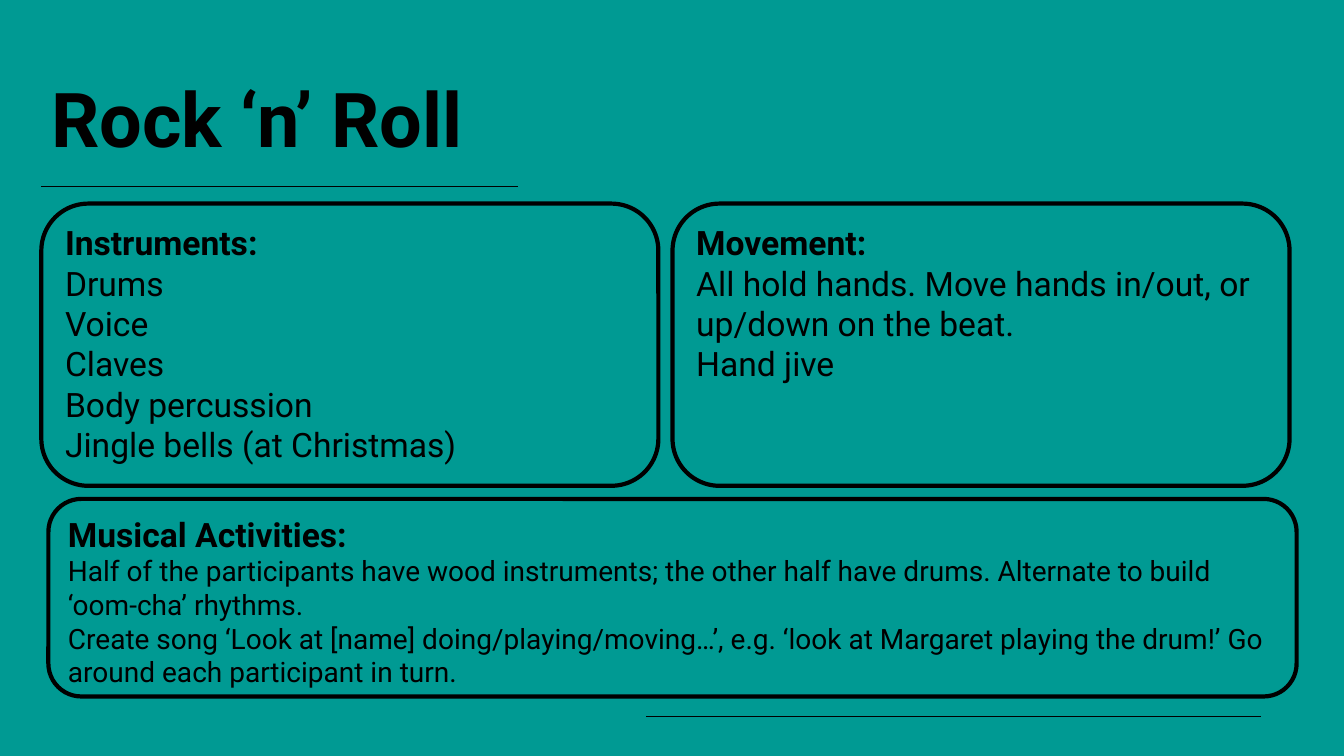
from lxml import etree
from pptx import Presentation
from pptx import util as u
from pptx.dml.color import RGBColor
from pptx.enum import shapes, text
from pptx.oxml.ns import qn

FONT = "Roboto"
TEAL, BLACK = "009A93", "000000"
LEFT, TOP = 0.41, 2.02
CARD_W, CARD_H, PITCH = 6.12, 2.8, 6.26

CARDS = [
    ("Instruments:", ["Drums", "Voice", "Claves", "Body percussion",
                      "Jingle bells (at Christmas)"]),
    ("Movement:", ["All hold hands. Move hands in/out, or up/down on the beat.",
                   "Hand jive"]),
]
ACTIVITIES = [
    "Half of the participants have wood instruments; the other half have drums. "
    "Alternate to build ‘oom-cha’ rhythms.",
    "Create song ‘Look at [name] doing/playing/moving…’, e.g. ‘look at Margaret "
    "playing the drum!’ Go around each participant in turn.",
]


def color(value):
    return RGBColor.from_string(value)


def add_run(p, words, size, bold=False):
    r = p.add_run()
    r.text = words
    r.font.name, r.font.size, r.font.bold = FONT, u.Pt(size), bold
    r.font.color.rgb = color(BLACK)


def add_rule(s, x1, x2, y):
    """Draw a thin horizontal line."""
    line = s.shapes.add_connector(shapes.MSO_CONNECTOR.STRAIGHT,
                                  *map(u.Inches, (x1, y, x2, y)))
    line.line.color.rgb = color(BLACK)
    line.line.width = u.Pt(1)
    etree.SubElement(line._element.spPr, qn("a:effectLst"))


def add_title(s, words, box):
    tf = s.shapes.add_textbox(*map(u.Inches, box)).text_frame
    tf.word_wrap = True
    tf.vertical_anchor = text.MSO_ANCHOR.TOP
    p = tf.paragraphs[0]
    p.line_spacing = 0.9
    add_run(p, words, 54, bold=True)


def add_card(s, box, heading, lines, size=24):
    """Draw a rounded outline with a bold heading over plain lines."""
    sp = s.shapes.add_shape(shapes.MSO_SHAPE.ROUNDED_RECTANGLE,
                            *map(u.Inches, box))
    sp.shadow.inherit = False
    sp.fill.background()
    sp.line.color.rgb = color(BLACK)
    sp.line.width = u.Pt(3)
    tf = sp.text_frame
    tf.word_wrap = True
    tf.vertical_anchor = text.MSO_ANCHOR.TOP
    add_run(tf.paragraphs[0], heading, 24, bold=True)
    for line in lines:
        add_run(tf.add_paragraph(), line, size)
    for p in tf.paragraphs:
        p.alignment = text.PP_ALIGN.LEFT


def main():
    prs = Presentation()
    prs.slide_width, prs.slide_height = u.Inches(13.33), u.Inches(7.5)
    s = prs.slides.add_slide(prs.slide_layouts[6])
    s.background.fill.solid()
    s.background.fill.fore_color.rgb = color(TEAL)

    add_rule(s, 6.41, 12.51, 7.11)
    add_rule(s, LEFT, 5.14, 1.85)
    add_title(s, "Rock ‘n’ Roll", (LEFT, 0.77, 7.43, 1.26))
    add_card(s, (0.48, 4.95, PITCH + CARD_W, 1.96),
             "Musical Activities:", ACTIVITIES, size=20)
    for col, (heading, lines) in enumerate(CARDS):
        add_card(s, (LEFT + col * PITCH, TOP, CARD_W, CARD_H), heading, lines)
    prs.save("out.pptx")


if __name__ == "__main__":
    main()
